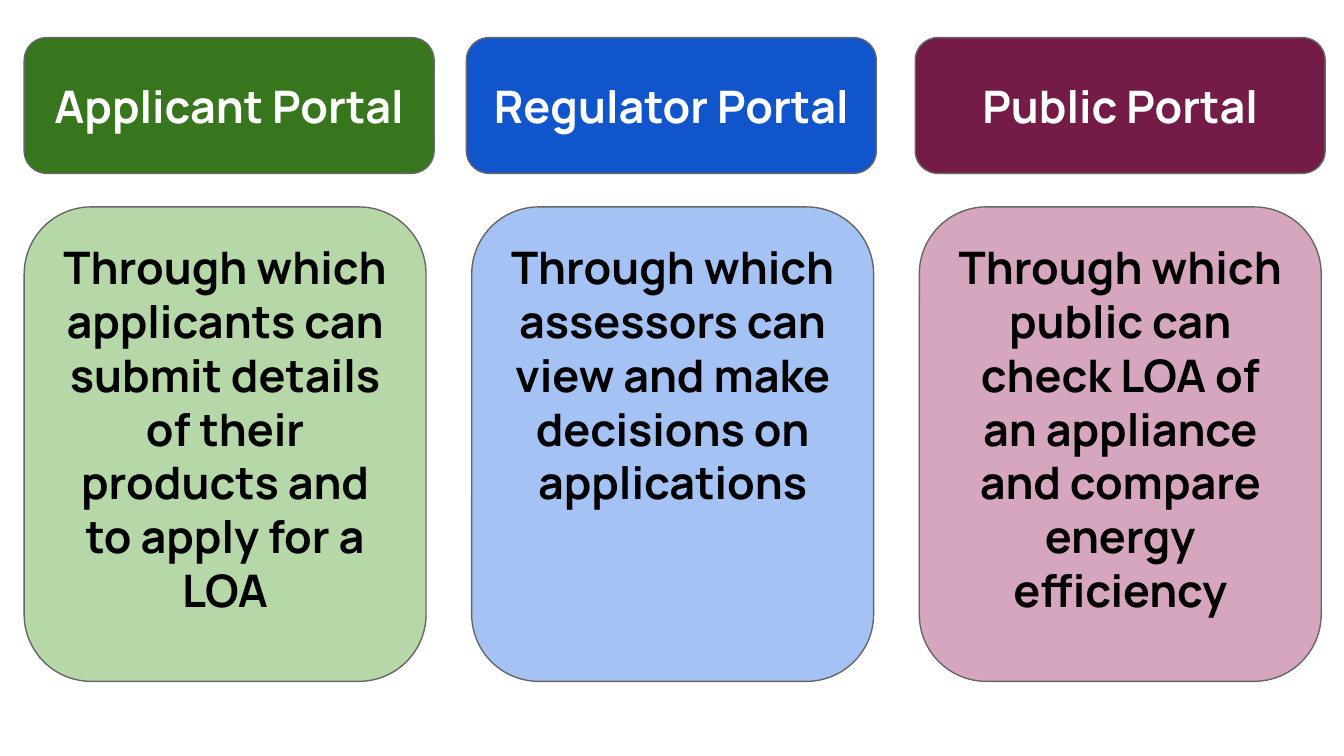
from pptx import Presentation, util as u
from pptx.dml.color import RGBColor
from pptx.enum import shapes, text

SLIDE_WIDTH = u.Inches(10)
SLIDE_HEIGHT = SLIDE_WIDTH * 9 // 16
COLUMN_LEFT, COLUMN_PITCH = 0.18, 3.33
HEADER_TOP, HEADER_WIDTH, HEADER_HEIGHT = 0.28, 3.05, 1.01
BODY_TOP, BODY_WIDTH, BODY_HEIGHT = 1.54, 2.99, 3.53

COLORS = {
    "green": "38761D", "light green": "B6D7A8",
    "blue": "1155CC", "light blue": "A4C2F4",
    "plum": "741B47", "light plum": "D5A6BD",
    "outline": "666666", "white": "FFFFFF", "black": "000000",
}

# Hue, header shift from the column's left edge, heading, description
PORTALS = [
    ("green", 0, "Applicant Portal",
     "Through which applicants can submit details of their products and to apply for a LOA"),
    ("blue", -0.04, "Regulator Portal",
     "Through which assessors can view and make decisions on applications"),
    ("plum", -0.03, "Public Portal",
     "Through which public can check LOA of an appliance and compare energy efficiency"),
]


def color(name):
    return RGBColor.from_string(COLORS[name])


def add_card(s, box, words, fill, ink, anchor):
    sp = s.shapes.add_shape(shapes.MSO_SHAPE.ROUNDED_RECTANGLE, *map(u.Inches, box))
    sp.shadow.inherit = False
    sp.fill.solid()
    sp.fill.fore_color.rgb = color(fill)
    sp.line.color.rgb = color("outline")
    sp.line.width = u.Pt(0.75)
    tf = sp.text_frame
    tf.word_wrap = True
    tf.vertical_anchor = anchor
    tf.margin_left = tf.margin_right = tf.margin_top = tf.margin_bottom = u.Inches(0.1)
    p = tf.paragraphs[0]
    p.text = words
    p.alignment = text.PP_ALIGN.CENTER
    p.font.name = "Manrope"
    p.font.size = u.Pt(24)
    p.font.bold = True
    p.font.color.rgb = color(ink)


def add_portal(s, left, hue, header_shift, heading, description):
    add_card(s, (left + header_shift, HEADER_TOP, HEADER_WIDTH, HEADER_HEIGHT),
             heading, hue, "white", text.MSO_ANCHOR.MIDDLE)
    add_card(s, (left, BODY_TOP, BODY_WIDTH, BODY_HEIGHT),
             description, f"light {hue}", "black", text.MSO_ANCHOR.TOP)


def main():
    prs = Presentation()
    prs.slide_width, prs.slide_height = SLIDE_WIDTH, SLIDE_HEIGHT
    s = prs.slides.add_slide(prs.slide_layouts[6])
    for column, portal in enumerate(PORTALS):
        add_portal(s, COLUMN_LEFT + column * COLUMN_PITCH, *portal)
    prs.save("out.pptx")


if __name__ == "__main__":
    main()
